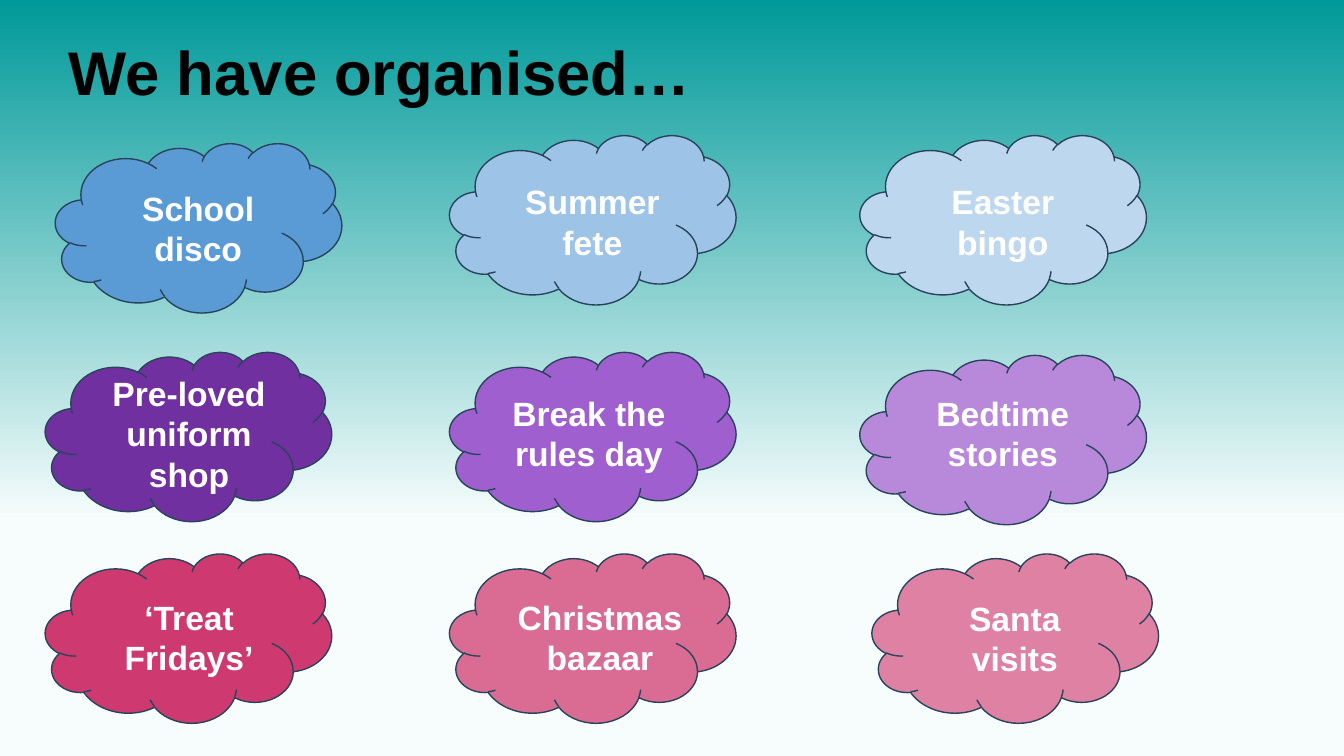
from copy import deepcopy

from pptx import Presentation
from pptx import util as u
from pptx.dml.color import RGBColor
from pptx.enum import shapes, text
from pptx.oxml.ns import qn

HUES = {
    "teal": "009999", "mist": "F7FDFC", "black": "000000", "white": "FFFFFF",
    "edge": "28445D",
    "blue": "5B9BD5", "sky": "9DC3E6", "ice": "BDD7EE",
    "plum": "7030A0", "violet": "9F5FCF", "lilac": "B889DB",
    "rose": "CE3A6F", "pink": "DA6C93", "blush": "DF81A3",
}
CLOUD = (2.84, 1.68)

# wording, hue, cloud left and top, label left, top, width and height
EVENTS = [
    ("School disco", "blue", (0.55, 1.42), (1.24, 1.81, 1.45, 0.91)),
    ("Summer fete", "sky", (4.46, 1.34), (5.1, 1.75, 1.55, 0.91)),
    ("Easter bingo", "ice", (8.53, 1.34), (9.17, 1.75, 1.55, 0.91)),
    ("Pre-loved uniform shop", "plum", (0.45, 3.49), (0.81, 3.65, 2.13, 1.31)),
    ("Break the rules day", "violet", (4.46, 3.49), (4.95, 3.85, 1.78, 0.91)),
    ("Bedtime stories", "lilac", (8.53, 3.52), (9.17, 3.85, 1.55, 0.91)),
    ("‘Treat Fridays’", "rose", (0.45, 5.49), (1.1, 5.87, 1.55, 0.91)),
    ("Christmas bazaar", "pink", (4.46, 5.49), (5.02, 5.87, 1.86, 0.91)),
    ("Santa visits", "blush", (8.65, 5.49), (9.29, 5.88, 1.55, 0.91)),
]


def hue(name):
    return RGBColor.from_string(HUES[name])


def inches(nums):
    return [u.Inches(n) for n in nums]


class Deck:
    """Holds the text style and the current slide."""
    face = "Arial"

    def __init__(self, show):
        self.slide = show.slides.add_slide(show.slide_layouts[5])

    def style(self, para, size, color):
        para.font.name = self.face
        para.font.size = u.Pt(size)
        para.font.bold = True
        para.font.color.rgb = hue(color)

    def backdrop(self, stops):
        """Fill the slide from top to bottom with (position, hue) stops."""
        fill = self.slide.background.fill
        fill.gradient()
        fill.gradient_angle = 270
        marks = self.slide.element.find(".//" + qn("a:gsLst"))
        while len(marks) < len(stops):
            marks.append(deepcopy(marks[0]))
        for mark, (place, color) in zip(fill.gradient_stops, stops):
            mark.position = place
            mark.color.rgb = hue(color)

    def title(self, words, box):
        head = self.slide.shapes.title
        head.left, head.top, head.width, head.height = inches(box)
        frame = head.text_frame
        frame.text = words
        frame.vertical_anchor = text.MSO_ANCHOR.MIDDLE
        para = frame.paragraphs[0]
        para.alignment = text.PP_ALIGN.LEFT
        para.line_spacing = 0.9
        self.style(para, 44, "black")

    def cloud(self, color, spot):
        puff = self.slide.shapes.add_shape(
            shapes.MSO_SHAPE.CLOUD, *inches(spot + CLOUD))
        puff.shadow.inherit = False
        puff.fill.solid()
        puff.fill.fore_color.rgb = hue(color)
        puff.line.color.rgb = hue("edge")
        puff.line.width = u.Pt(1)

    def label(self, words, box):
        frame = self.slide.shapes.add_textbox(*inches(box)).text_frame
        frame.word_wrap = True
        frame.auto_size = text.MSO_AUTO_SIZE.SHAPE_TO_FIT_TEXT
        frame.text = words
        para = frame.paragraphs[0]
        para.alignment = text.PP_ALIGN.CENTER
        self.style(para, 24, "white")


def main():
    show = Presentation()
    show.slide_width, show.slide_height = inches((13.33, 7.5))
    deck = Deck(show)
    deck.backdrop([(0, "teal"), (0.69, "mist"), (1, "mist")])
    deck.title("We have organised…", (0.58, 0.02, 12.2, 1.45))
    for words, color, spot, box in EVENTS:
        deck.cloud(color, spot)
        deck.label(words, box)
    show.save("out.pptx")


if __name__ == "__main__":
    main()
